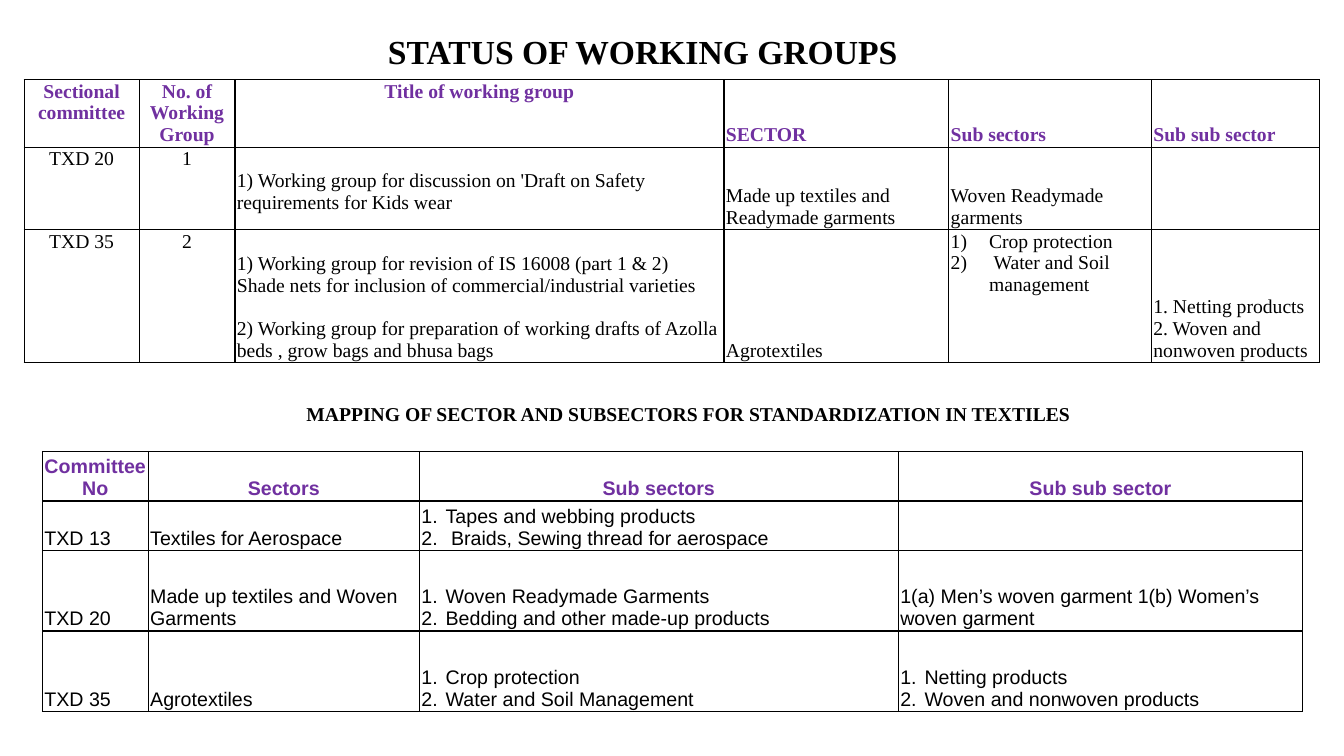
import pptx
import pptx.util
import pptx.dml.color
import pptx.enum.text
from pptx.util import Inches, Pt
from lxml import etree

COLORS = {"text": "000000", "heading": "7030A0", "border": "000000"}
SERIF, SANS = "Times New Roman", "Arial"
A = "http://schemas.openxmlformats.org/drawingml/2006/main"
ALIGN = pptx.enum.text.PP_ALIGN
ANCHOR = pptx.enum.text.MSO_ANCHOR

WORKING_GROUPS = [
    ["Sectional committee", "No. of Working Group", "Title of working group",
     "SECTOR", "Sub sectors", "Sub sub sector"],
    ["TXD 20", "1",
     "1) Working group for discussion on 'Draft on Safety requirements for Kids wear",
     "Made up textiles and Readymade garments", "Woven Readymade garments", ""],
    ["TXD 35", "2",
     ["1) Working group for revision of IS 16008 (part 1 & 2) Shade nets for "
      "inclusion of commercial/industrial varieties",
      "2) Working group for preparation of working drafts of Azolla beds , "
      "grow bags and bhusa bags"],
     "Agrotextiles", ["Crop protection", " Water and Soil management"],
     ["1. Netting products", "2. Woven and nonwoven products"]],
]
SECTOR_MAP = [
    ["Committee No", "Sectors", "Sub sectors", "Sub sub sector"],
    ["TXD 13", "Textiles for Aerospace",
     ["Tapes and webbing products", " Braids, Sewing thread for aerospace"], ""],
    ["TXD 20", "Made up textiles and Woven Garments",
     ["Woven Readymade Garments", "Bedding and other made-up products"],
     "1(a) Men’s woven garment 1(b) Women’s woven garment"],
    ["TXD 35", "Agrotextiles", ["Crop protection", "Water and Soil Management"],
     ["Netting products", "Woven and nonwoven products"]],
]


def number_paragraph(p, scheme, indent):
    """Give a paragraph automatic numbering with a hanging indent."""
    pPr = p._p.get_or_add_pPr()
    pPr.set("marL", str(Inches(indent)))
    pPr.set("indent", str(-Inches(indent)))
    etree.SubElement(pPr, f"{{{A}}}buFont", typeface="+mj-lt")
    etree.SubElement(pPr, f"{{{A}}}buAutoNum", type=scheme)


def write(tf, text, font=SERIF, size=14, color="text", bold=False,
          align=ALIGN.LEFT, gap=0, spacing=None, numbering=None):
    """Fill a text frame with one paragraph per given string."""
    lines = [text] if isinstance(text, str) else text
    for i, line in enumerate(lines):
        p = tf.add_paragraph() if i else tf.paragraphs[0]
        p.alignment = align
        if spacing:
            p.line_spacing = spacing
        if i and gap:
            p.space_before = Pt(gap)
        if numbering:
            number_paragraph(p, *numbering)
        r = p.add_run()
        r.text = line
        r.font.name, r.font.size, r.font.bold = font, Pt(size), bold
        r.font.color.rgb = pptx.dml.color.RGBColor.from_string(COLORS[color])


def add_text(s, left, top, width, height, text, wrap=True, **fmt):
    """Add a text box."""
    tf = s.shapes.add_textbox(Inches(left), Inches(top), Inches(width),
                              Inches(height)).text_frame
    tf.word_wrap = wrap
    write(tf, text, **fmt)


def style_cell(cell):
    """Draw thin borders, clear the fill and tighten the margins."""
    tcPr = cell._tc.get_or_add_tcPr()
    for side in ("lnL", "lnR", "lnT", "lnB"):
        ln = etree.SubElement(tcPr, f"{{{A}}}{side}", w=str(Pt(1)))
        fill = etree.SubElement(ln, f"{{{A}}}solidFill")
        etree.SubElement(fill, f"{{{A}}}srgbClr", val=COLORS["border"])
    cell.fill.background()
    cell.margin_left = cell.margin_right = Inches(0.02)
    cell.margin_top = cell.margin_bottom = Inches(0.01)


def add_grid(s, left, top, widths, heights, data, layout):
    """Add a bordered table whose cell formats come from layout(row, col, text)."""
    table = s.shapes.add_table(len(data), len(widths), Inches(left), Inches(top),
                               Inches(sum(widths)), Inches(sum(heights))).table
    table.first_row = table.horz_banding = False
    for column, width in zip(table.columns, widths):
        column.width = Inches(width)
    for i, (height, row) in enumerate(zip(heights, data)):
        table.rows[i].height = Inches(height)
        for j, text in enumerate(row):
            cell = table.cell(i, j)
            style_cell(cell)
            if not text:
                continue
            anchor, top_margin, fmt = layout(i, j, text)
            cell.vertical_anchor = anchor
            cell.margin_top = Inches(top_margin)
            if i == 0:
                fmt.update(color="heading", bold=True)
            write(cell.text_frame, text, **fmt)


def group_layout(i, j, text):
    """Return anchor, top margin and text format for the working group table."""
    if j < 2 or (i, j) == (0, 2):
        return ANCHOR.TOP, 0.01, {"align": ALIGN.CENTER}
    if j == 2:
        return ANCHOR.TOP, 0.23, {"gap": 15.5}
    if j == 4 and isinstance(text, list):
        return ANCHOR.TOP, 0.01, {"numbering": ("arabicParenR", 0.38)}
    return ANCHOR.BOTTOM, 0.01, {}


def sector_layout(i, j, text):
    """Return anchor, top margin and text format for the sector table."""
    fmt = {"font": SANS}
    if i == 0:
        fmt["align"] = ALIGN.CENTER
    if isinstance(text, list):
        fmt["numbering"] = ("arabicPeriod", 0.24)
    return ANCHOR.BOTTOM, 0.01, fmt


def main():
    """Build and save the slide."""
    prs = pptx.Presentation()
    prs.slide_width, prs.slide_height = Inches(13.33), Inches(7.5)
    s = prs.slides.add_slide(prs.slide_layouts[6])
    add_grid(s, 0.42, 4.48, [1.05, 2.69, 4.75, 4.01], [0.49, 0.49, 0.8, 0.8],
             SECTOR_MAP, sector_layout)
    add_grid(s, 0.24, 0.79, [1.14, 0.95, 4.85, 2.23, 2.01, 1.67], [0.67, 0.82, 1.31],
             WORKING_GROUPS, group_layout)
    add_text(s, 3.75, 0.26, 5.37, 0.5, "STATUS OF WORKING GROUPS", wrap=False,
             size=24, bold=True)
    add_text(s, 2.94, 3.96, 10, 0.31,
             "MAPPING OF SECTOR AND SUBSECTORS FOR STANDARDIZATION IN TEXTILES",
             bold=True, spacing=0.9)
    prs.save("out.pptx")


if __name__ == "__main__":
    main()
